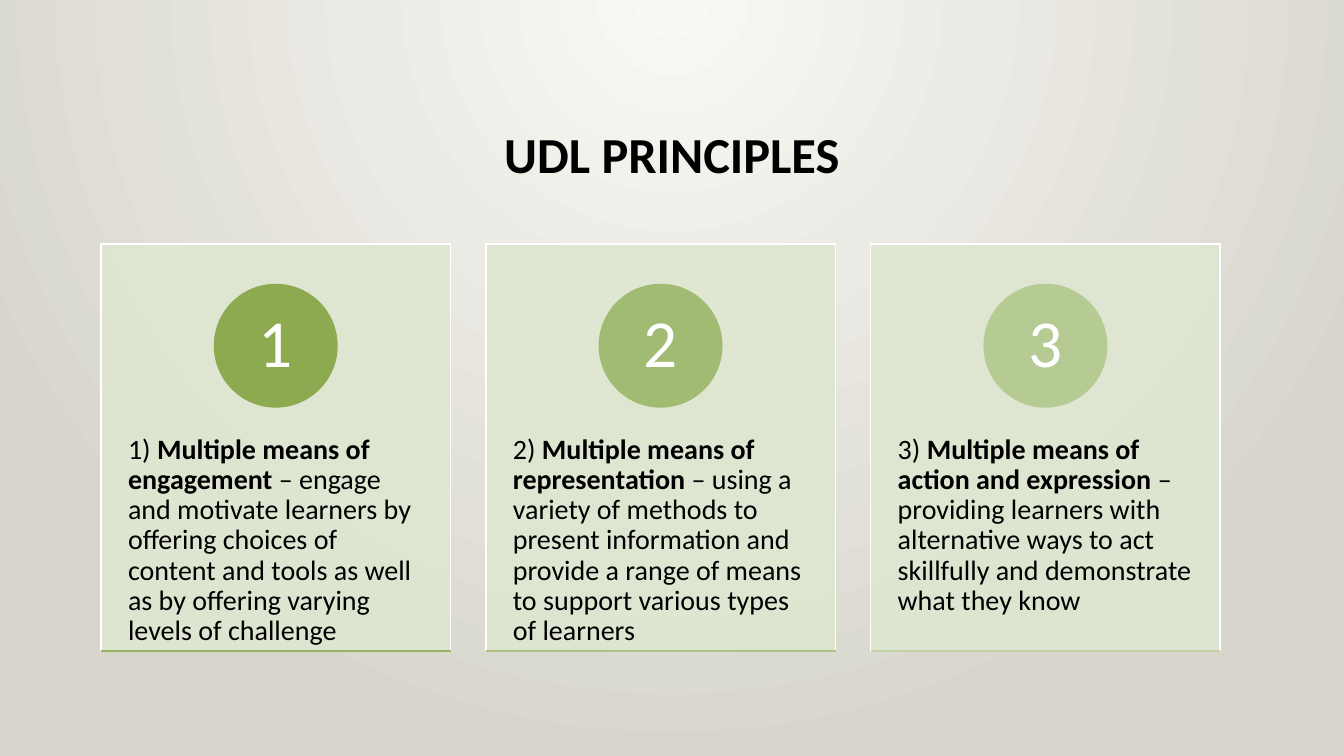
import pptx
import pptx.util
import pptx.dml.color
import pptx.enum.shapes
import pptx.enum.text
import pptx.oxml
import pptx.oxml.ns
from dataclasses import dataclass

TITLE = "UDL PRINCIPLES"
# number, principle, explanation, circle colour, rule colour
PRINCIPLES = [
    ("1", "Multiple means of engagement ",
     "– engage and motivate learners by offering choices of content and tools "
     "as well as by offering varying levels of challenge", "8DAA51", "97B360"),
    ("2", "Multiple means of representation ",
     "– using a variety of methods to present information and provide a range "
     "of means to support various types of learners", "A1BB72", "ACC383"),
    ("3", "Multiple means of action and expression ",
     "– providing learners with alternative ways to act skillfully and "
     "demonstrate what they know", "B6CB94", "C1D3A5"),
]


@dataclass(frozen=True)
class Theme:
    font: str = "Calibri"
    ink: str = "000000"
    white: str = "FFFFFF"
    card: str = "DEE7D1"
    glow: str = "F9F8F5"
    edge: str = "D8D6CC"
    title_size: int = 36
    number_size: int = 48
    body_size: int = 20
    line_width: float = 1.25


THEME = Theme()
WIDTH, HEIGHT = 13.33, 7.5
MARGIN, CARD_TOP = 1, 2.42
CARD_WIDTH, CARD_HEIGHT = 3.47, 4.04
COLUMN_STEP = CARD_WIDTH * 1.1  # the gap is a tenth of a card
CIRCLE = CARD_HEIGHT * 0.3
CIRCLE_TOP = CARD_TOP + CARD_HEIGHT * 0.1
TEXT_TOP, TEXT_HEIGHT = CARD_TOP + CARD_HEIGHT * 0.38, CARD_HEIGHT * 0.6

SHAPES = pptx.enum.shapes.MSO_SHAPE
ALIGN = pptx.enum.text.PP_ALIGN
ANCHOR = pptx.enum.text.MSO_ANCHOR


def inches(*lengths):
    return [pptx.util.Inches(length) for length in lengths]


def rgb(code):
    return pptx.dml.color.RGBColor.from_string(code)


def paint_background(page):
    """Radial gradient that glows from the middle of the top edge."""
    fill = page.background.fill
    fill.gradient()
    for stop, colour in zip(fill.gradient_stops, (THEME.glow, THEME.edge)):
        stop.color.rgb = rgb(colour)
    gradient = page.element.find(".//" + pptx.oxml.ns.qn("a:gradFill"))
    linear = gradient.find(pptx.oxml.ns.qn("a:lin"))
    gradient.replace(linear, pptx.oxml.parse_xml(
        f'<a:path {pptx.oxml.ns.nsdecls("a")} path="circle">'
        '<a:fillToRect l="43000" t="0" r="43000" b="100000"/></a:path>'))


def write(shape, spans, size, colour, align, anchor, insets=(0.1, 0.05)):
    """Fill one paragraph with (text, bold) spans."""
    frame = shape.text_frame
    frame.word_wrap = True
    frame.vertical_anchor = anchor
    frame.margin_left = frame.margin_right = pptx.util.Inches(insets[0])
    frame.margin_top = frame.margin_bottom = pptx.util.Inches(insets[1])
    para = frame.paragraphs[0]
    para.alignment = align
    para.line_spacing = 0.9
    for text, bold in spans:
        span = para.add_run()
        span.text = text
        span.font.name = THEME.font
        span.font.size = pptx.util.Pt(size)
        span.font.bold = bold
        span.font.color.rgb = rgb(colour)


def add_filled(page, kind, place, fill, line):
    shape = page.shapes.add_shape(kind, *inches(*place))
    shape.shadow.inherit = False
    shape.fill.solid()
    shape.fill.fore_color.rgb = rgb(fill)
    shape.line.color.rgb = rgb(line)
    shape.line.width = pptx.util.Pt(THEME.line_width)
    return shape


def add_rule(page, left, top, width, colour):
    rule = page.shapes.add_connector(
        pptx.enum.shapes.MSO_CONNECTOR.STRAIGHT,
        *inches(left, top, left + width, top))
    rule.line.color.rgb = rgb(colour)
    rule.line.width = pptx.util.Pt(THEME.line_width)
    pptx.oxml.ns.qn("a:effectLst")
    rule.element.spPr.append(pptx.oxml.parse_xml(
        f'<a:effectLst {pptx.oxml.ns.nsdecls("a")}/>'))


def add_card(page, left, number, principle, explanation, circle_colour, rule_colour):
    card = add_filled(page, SHAPES.RECTANGLE,
                      (left, CARD_TOP, CARD_WIDTH, CARD_HEIGHT),
                      THEME.card, THEME.white)
    colour = card.element.spPr.find(
        pptx.oxml.ns.qn("a:solidFill") + "/" + pptx.oxml.ns.qn("a:srgbClr"))
    colour.append(pptx.oxml.parse_xml(
        f'<a:alpha {pptx.oxml.ns.nsdecls("a")} val="90000"/>'))

    box = page.shapes.add_textbox(*inches(left, TEXT_TOP, CARD_WIDTH, TEXT_HEIGHT))
    write(box, [(f"{number}) ", False), (principle, True), (explanation, False)],
          THEME.body_size, THEME.ink, ALIGN.LEFT, ANCHOR.TOP, (0.27, 0.36))

    circle = add_filled(page, SHAPES.OVAL,
                        (left + (CARD_WIDTH - CIRCLE) / 2, CIRCLE_TOP, CIRCLE, CIRCLE),
                        circle_colour, circle_colour)
    write(circle, [(number, False)], THEME.number_size, THEME.white,
          ALIGN.CENTER, ANCHOR.MIDDLE, (0.09, 0.01))

    add_rule(page, left, CARD_TOP + CARD_HEIGHT, CARD_WIDTH, rule_colour)


def main():
    deck = pptx.Presentation()
    deck.slide_width, deck.slide_height = inches(WIDTH, HEIGHT)
    page = deck.slides.add_slide(deck.slide_layouts[6])
    paint_background(page)

    title = page.shapes.add_textbox(
        *inches(MARGIN, 0.68, WIDTH - 2 * MARGIN, 1.75))
    write(title, [(TITLE, True)], THEME.title_size, THEME.ink,
          ALIGN.CENTER, ANCHOR.MIDDLE)

    for column, principle in enumerate(PRINCIPLES):
        add_card(page, MARGIN + column * COLUMN_STEP, *principle)
    deck.save("out.pptx")


if __name__ == "__main__":
    main()
